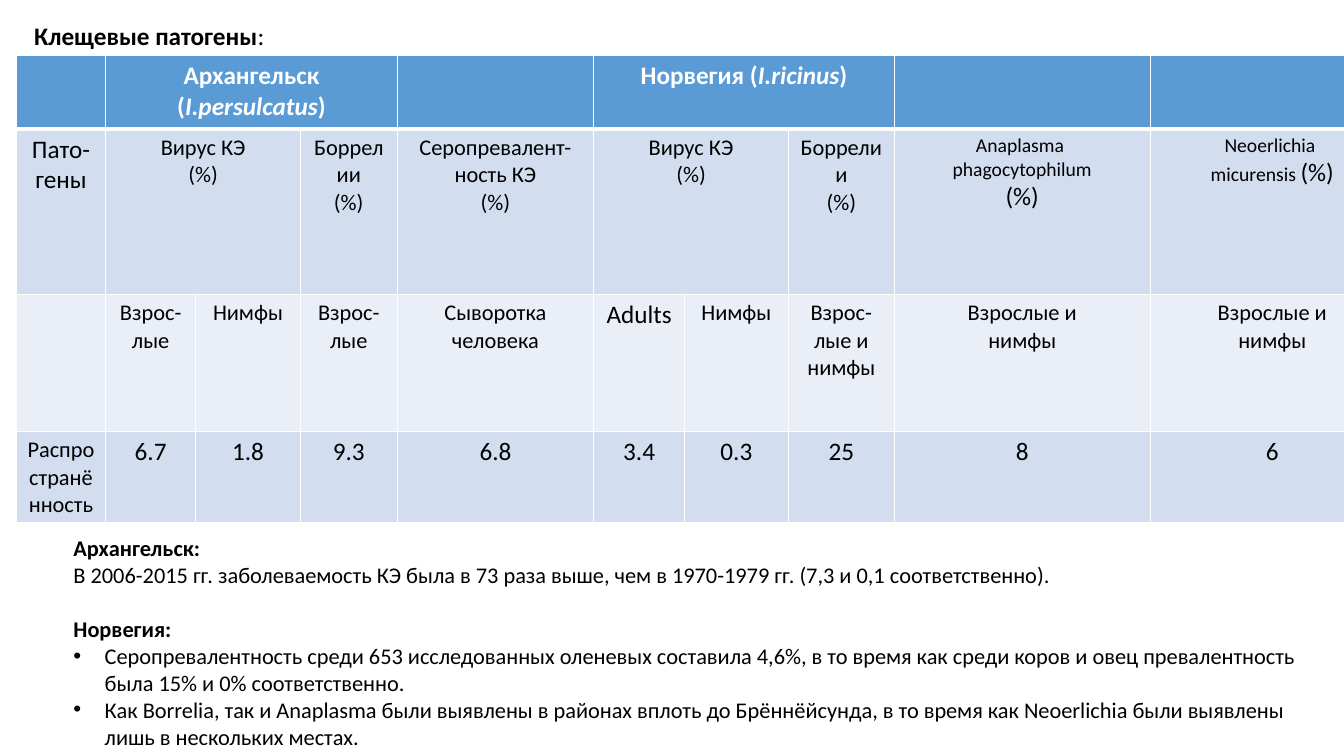
from lxml import etree
from pptx import Presentation
from pptx.dml.color import RGBColor
from pptx.enum.text import MSO_AUTO_SIZE, PP_ALIGN
from pptx.oxml.ns import qn
from pptx.util import Inches, Pt

CENTER = PP_ALIGN.CENTER
GROW = MSO_AUTO_SIZE.SHAPE_TO_FIT_TEXT

COLORS = {
    "header": "5B9BD5",
    "band": "D2DEEF",
    "light": "EAEFF7",
    "white": "FFFFFF",
    "black": "000000",
}
FONT = "Calibri"
BOLD = {"bold": True}
ITALIC = {"italic": True}
SMALL = {"size": 14}
MEDIUM = {"size": 16}
LARGE = {"size": 18}

COLUMN_WIDTHS = [0.89, 0.89, 1.04, 0.96, 1.95, 0.9, 1.03, 1.05, 2.54, 2.42]
ROW_HEIGHTS = [0.73, 1.64, 1.36, 0.89]
ROW_FILLS = ["header", "band", "light", "band"]
ROW_FORMATS = [{"size": 18, "bold": True, "color": "white"}, MEDIUM, MEDIUM, LARGE]
# row, first column, last column
MERGES = [(0, 1, 3), (0, 5, 7), (1, 1, 2), (1, 5, 6)]

# A cell is a list of paragraphs, a paragraph is a list of (text, format) runs.
PERCENT = [("(%)", {})]
VIRUS = [[("Вирус КЭ", {})], PERCENT]
BORRELIA = [[("Боррелии", {})], PERCENT]
ADULTS = [[("Взрос-лые", {})]]
NYMPHS = [[("Нимфы", {})]]
ADULTS_AND_NYMPHS = [[("Взрослые и\nнимфы", {})]]
PREVALENCE = ["6.7", "1.8", "9.3", "6.8", "3.4", "0.3", "25", "8", "6"]

CELLS = [
    {
        1: [[("Архангельск\n(", {}), ("I.persulcatus", ITALIC), (")", {})]],
        5: [[("Норвегия (", {}), ("I.ricinus", ITALIC), (")", {})]],
    },
    {
        0: [[("Пато-гены", LARGE)]],
        1: VIRUS,
        3: BORRELIA,
        4: [[("Серопревалент-ность КЭ", {})], PERCENT],
        5: VIRUS,
        7: BORRELIA,
        8: [[("Anaplasma \nphagocytophilum", SMALL)], [("(%)", LARGE)]],
        9: [[("Neoerlichia \nmicurensis ", SMALL), ("(%)", LARGE)]],
    },
    {
        1: ADULTS,
        2: NYMPHS,
        3: ADULTS,
        4: [[("Сыворотка\nчеловека", {})]],
        5: [[("Adults", LARGE)]],
        6: NYMPHS,
        7: [[("Взрос-лые и\nнимфы", {})]],
        8: ADULTS_AND_NYMPHS,
        9: ADULTS_AND_NYMPHS,
    },
    {0: [[("Распространённость", MEDIUM)]]}
    | {column: [[(value, {})]] for column, value in enumerate(PREVALENCE, 1)},
]

NOTES = [
    [("Архангельск:", BOLD)],
    [("В 2006-2015 гг. заболеваемость КЭ была в 73 раза выше, чем в 1970-1979 гг. "
      "(7,3 и 0,1 соответственно).", {})],
    [("Норвегия:", BOLD)],
    [("Серопревалентность среди 653 исследованных оленевых составила 4,6%, "
      "в то время как среди коров и овец превалентность была 15% и 0% соответственно.", {})],
    [("Как Borrelia, так и Anaplasma были выявлены в районах вплоть до Брённёйсунда, "
      "в то время как Neoerlichia были выявлены лишь в нескольких местах.", {})],
]
NORWAY_HEADING = 2


class SlideBuilder:
    def __init__(self, slide):
        self.slide = slide
        self.base = {"name": FONT, "size": 18, "bold": False, "italic": False, "color": "black"}

    def add_run(self, paragraph, text, values):
        """Add a run; each newline becomes a line break of the same size."""
        values = self.base | values
        for index, line in enumerate(text.split("\n")):
            if index:
                paragraph.add_line_break()
                line_break = paragraph._p.findall(qn("a:br"))[-1]
                etree.SubElement(line_break, qn("a:rPr"), sz=str(values["size"] * 100))
            run = paragraph.add_run()
            run.text = line
            run.font.color.rgb = RGBColor.from_string(COLORS[values["color"]])
            for name, value in values.items():
                if name != "color":
                    setattr(run.font, name, Pt(value) if name == "size" else value)

    def fill_text(self, frame, paragraphs, values, alignment=None):
        for index, runs in enumerate(paragraphs):
            paragraph = frame.add_paragraph() if index else frame.paragraphs[0]
            paragraph.alignment = alignment
            for text, run_values in runs:
                self.add_run(paragraph, text, values | run_values)

    def add_text(self, left, top, width, height, paragraphs, values, wrap):
        box = self.slide.shapes.add_textbox(*map(Inches, (left, top, width, height)))
        frame = box.text_frame
        frame.word_wrap = wrap
        frame.auto_size = GROW
        self.fill_text(frame, paragraphs, values)
        return frame

    def add_bullet(self, paragraph, indent):
        properties = paragraph._p.get_or_add_pPr()
        properties.set("marL", str(Inches(indent)))
        properties.set("indent", str(-Inches(indent)))
        etree.SubElement(properties, qn("a:buFont"), typeface="Arial")
        etree.SubElement(properties, qn("a:buChar"), char="•")

    def add_borders(self, cell, widths):
        properties = cell._tc.get_or_add_tcPr()
        for side, width in widths.items():
            line = etree.SubElement(properties, qn(f"a:ln{side}"), w=str(Pt(width)))
            fill = etree.SubElement(line, qn("a:solidFill"))
            etree.SubElement(fill, qn("a:srgbClr"), val=COLORS["white"])

    def add_table(self, left, top):
        frame = self.slide.shapes.add_table(
            len(ROW_HEIGHTS), len(COLUMN_WIDTHS), Inches(left), Inches(top),
            Inches(sum(COLUMN_WIDTHS)), Inches(sum(ROW_HEIGHTS)))
        table = frame.table
        table.horz_banding = False
        for column, width in zip(table.columns, COLUMN_WIDTHS):
            column.width = Inches(width)
        for row_index, height in enumerate(ROW_HEIGHTS):
            table.rows[row_index].height = Inches(height)
            borders = {"L": 1, "R": 1, "T": 3 if row_index == 1 else 1,
                       "B": 3 if row_index == 0 else 1}
            for column_index in range(len(COLUMN_WIDTHS)):
                cell = table.cell(row_index, column_index)
                self.add_borders(cell, borders)
                cell.fill.solid()
                cell.fill.fore_color.rgb = RGBColor.from_string(COLORS[ROW_FILLS[row_index]])
                self.fill_text(cell.text_frame, CELLS[row_index].get(column_index, []),
                               ROW_FORMATS[row_index], CENTER)
        for row_index, first, last in MERGES:
            table.cell(row_index, first).merge(table.cell(row_index, last))


def main():
    presentation = Presentation()
    presentation.slide_width = Inches(13.33)
    presentation.slide_height = Inches(7.5)
    builder = SlideBuilder(presentation.slides.add_slide(presentation.slide_layouts[6]))

    notes = builder.add_text(0.63, 5.25, 12.38, 2.25, NOTES, MEDIUM, True)
    notes.paragraphs[NORWAY_HEADING].space_before = Pt(19.5)
    for paragraph in notes.paragraphs[NORWAY_HEADING + 1:]:
        builder.add_bullet(paragraph, 0.31)

    builder.add_table(0.16, 0.55)
    title = [[("Клещевые патогены", BOLD), (":", {})]]
    builder.add_text(0.24, 0.15, 2.51, 0.4, title, LARGE, False)
    presentation.save("out.pptx")


if __name__ == "__main__":
    main()
